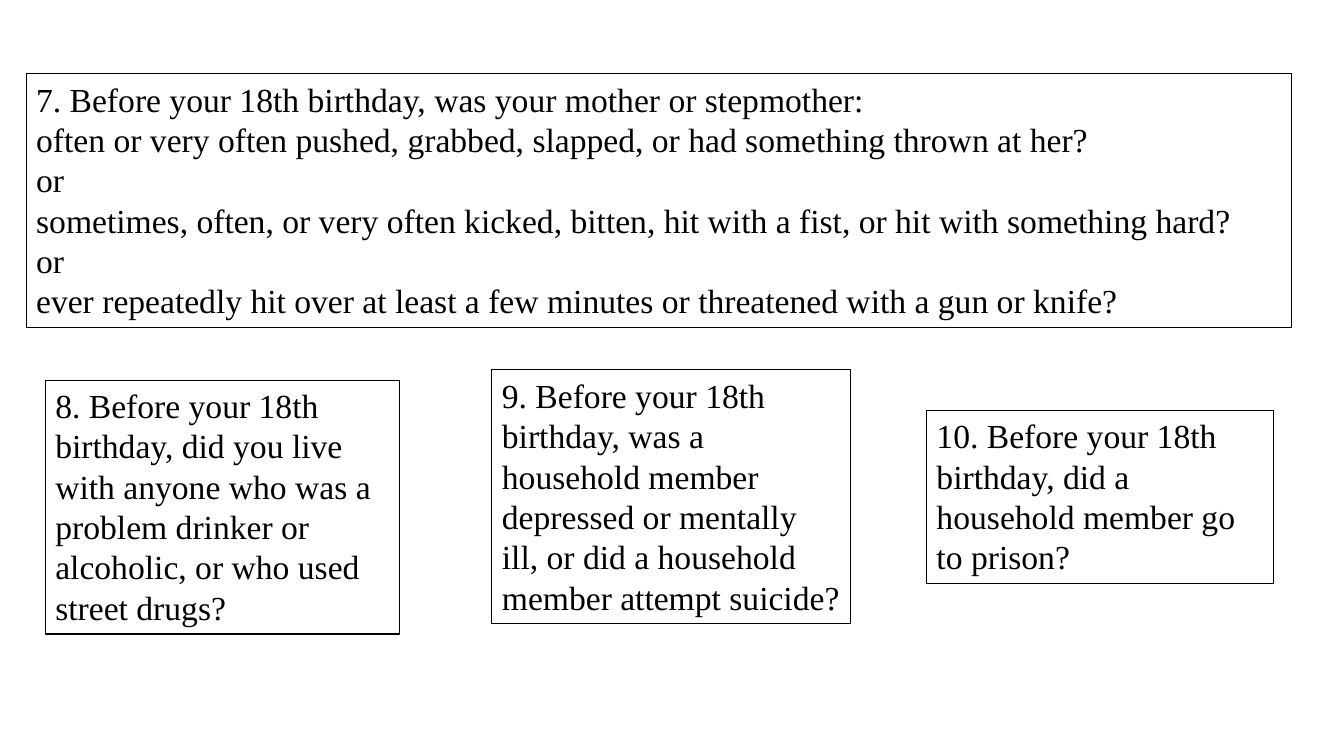
from dataclasses import dataclass

import pptx
import pptx.dml.color
import pptx.enum.text
import pptx.slide
import pptx.util

Inches = pptx.util.Inches
Pt = pptx.util.Pt


@dataclass(frozen=True)
class Theme:
    ink: pptx.dml.color.RGBColor = pptx.dml.color.RGBColor(0, 0, 0)
    font: str = "Times New Roman"
    text_size: float = 24
    border: float = 0.75


@dataclass(frozen=True)
class Question:
    left: float
    top: float
    width: float
    height: float
    paragraphs: tuple[str, ...]


THEME = Theme()

QUESTIONS = (
    Question(0.26, 0.73, 12.55, 2.52, (
        "7. Before your 18th birthday, was your mother or stepmother:",
        "often or very often pushed, grabbed, slapped, or had something thrown at her?",
        "or",
        "sometimes, often, or very often kicked, bitten, hit with a fist, or hit with something hard?",
        "or",
        "ever repeatedly hit over at least a few minutes or threatened with a gun or knife?",
    )),
    Question(0.45, 3.77, 3.51, 2.52, (
        "8. Before your 18th birthday, did you live with anyone who was a "
        "problem drinker or alcoholic, or who used street drugs?",
    )),
    Question(4.88, 3.67, 3.56, 2.52, (
        "9. Before your 18th birthday, was a household member depressed or "
        "mentally ill, or did a household member attempt suicide?",
    )),
    Question(9.19, 4.07, 3.44, 1.72, (
        "10. Before your 18th birthday, did a household member go to prison?",
    )),
)


def add_question(slide: pptx.slide.Slide, question: Question) -> None:
    sp = slide.shapes.add_textbox(
        Inches(question.left), Inches(question.top),
        Inches(question.width), Inches(question.height),
    )
    sp.line.color.rgb = THEME.ink
    sp.line.width = Pt(THEME.border)
    tf = sp.text_frame
    tf.word_wrap = True
    tf.auto_size = pptx.enum.text.MSO_AUTO_SIZE.SHAPE_TO_FIT_TEXT
    tf.text = "\n".join(question.paragraphs)
    for p in tf.paragraphs:
        p.font.name = THEME.font
        p.font.size = Pt(THEME.text_size)
        p.font.color.rgb = THEME.ink


def main() -> None:
    prs = pptx.Presentation()
    prs.slide_width = Inches(13.33)
    prs.slide_height = Inches(7.5)
    slide = prs.slides.add_slide(prs.slide_layouts[6])
    for question in QUESTIONS:
        add_question(slide, question)
    prs.save("out.pptx")


if __name__ == "__main__":
    main()
